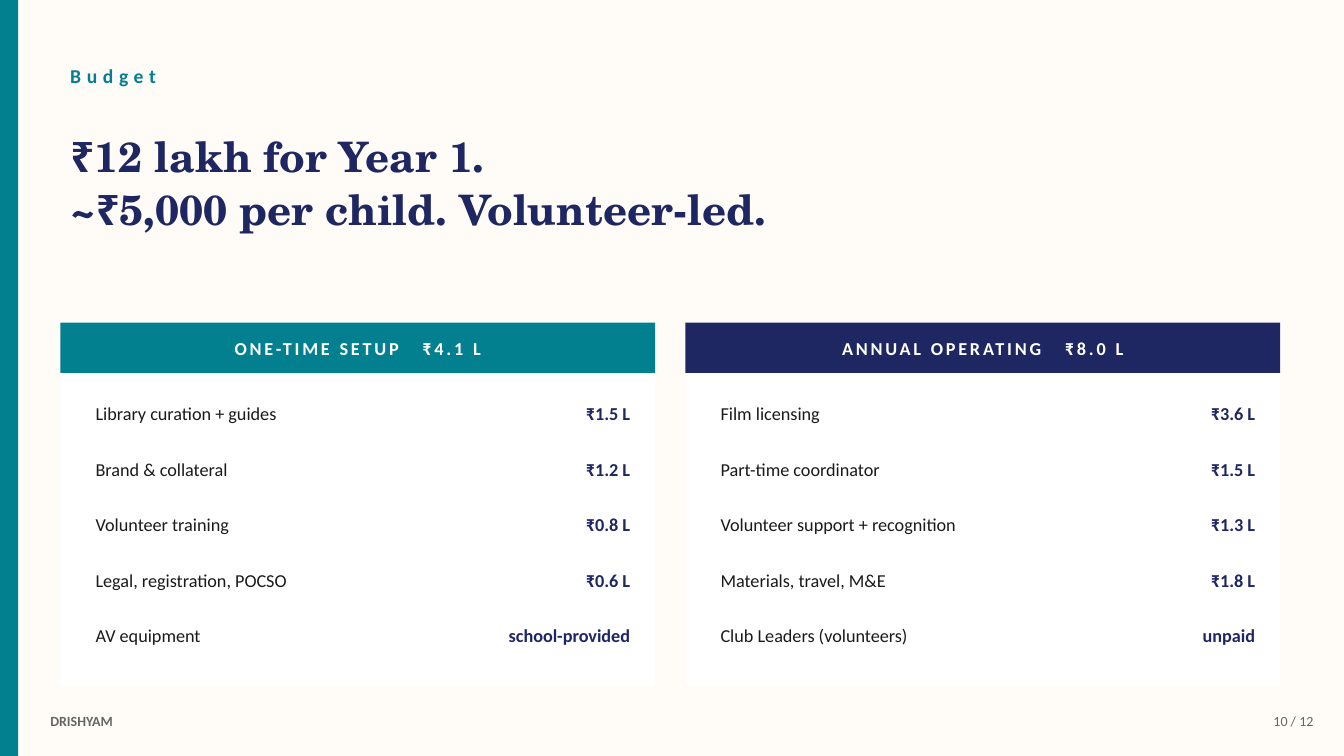
import pptx
import pptx.dml.color
import pptx.enum.shapes
import pptx.enum.text
import pptx.util

Cm = pptx.util.Cm
Pt = pptx.util.Pt
RGBColor = pptx.dml.color.RGBColor
ALIGN = pptx.enum.text.PP_ALIGN

CREAM = RGBColor(0xFF, 0xFC, 0xF7)
TEAL = RGBColor(0x02, 0x80, 0x90)
NAVY = RGBColor(0x1E, 0x27, 0x61)
WHITE = RGBColor(0xFF, 0xFF, 0xFF)
INK = RGBColor(0x1A, 0x1A, 0x1A)
GREY = RGBColor(0x66, 0x66, 0x66)

SLIDE_WIDTH, SLIDE_HEIGHT = 33.87, 19.05
PANEL_TOP, PANEL_WIDTH, PANEL_HEIGHT = 8.13, 14.99, 9.14
PANEL_PITCH = 15.75
HEADER_HEIGHT = 1.27
ROW_TOP, ROW_PITCH, ROW_HEIGHT = 9.78, 1.4, 1.27
LABEL_INDENT, LABEL_WIDTH, AMOUNT_WIDTH = 0.64, 10.16, 3.81
LEFT = 1.52

PANELS = [
    ("ONE-TIME SETUP", "₹4.1 L", TEAL, [
        ("Library curation + guides", "₹1.5 L"),
        ("Brand & collateral", "₹1.2 L"),
        ("Volunteer training", "₹0.8 L"),
        ("Legal, registration, POCSO", "₹0.6 L"),
        ("AV equipment", "school-provided"),
    ]),
    ("ANNUAL OPERATING", "₹8.0 L", NAVY, [
        ("Film licensing", "₹3.6 L"),
        ("Part-time coordinator", "₹1.5 L"),
        ("Volunteer support + recognition", "₹1.3 L"),
        ("Materials, travel, M&E", "₹1.8 L"),
        ("Club Leaders (volunteers)", "unpaid"),
    ]),
]


class BudgetSlide:
    body_font = "Calibri"
    title_font = "TeX Gyre Schola"

    def __init__(self, presentation):
        self.slide = presentation.slides.add_slide(presentation.slide_layouts[5])
        background = self.slide.background.fill
        background.solid()
        background.fore_color.rgb = CREAM

    def set_frame(self, text_frame):
        settings = {
            "word_wrap": True,
            "auto_size": pptx.enum.text.MSO_AUTO_SIZE.NONE,
            "vertical_anchor": pptx.enum.text.MSO_ANCHOR.MIDDLE,
        }
        for name, value in settings.items():
            setattr(text_frame, name, value)

    def add_run(self, paragraph, text, size, color, bold=False, tracking=0, font=None):
        """Append a run; tracking is the letter spacing in points."""
        run = paragraph.add_run()
        run.text = text
        settings = {"name": font or self.body_font, "size": Pt(size), "bold": bold}
        for name, value in settings.items():
            setattr(run.font, name, value)
        run.font.color.rgb = color
        if tracking:
            run._r.get_or_add_rPr().set("spc", str(round(tracking * 100)))

    def rectangle(self, left, top, width, height, color):
        shape = self.slide.shapes.add_shape(
            pptx.enum.shapes.MSO_SHAPE.RECTANGLE,
            Cm(left), Cm(top), Cm(width), Cm(height))
        shape.shadow.inherit = False
        shape.fill.solid()
        shape.fill.fore_color.rgb = color
        shape.line.fill.background()
        return shape

    def text(self, left, top, width, height, text, size, color,
             align=ALIGN.LEFT, **style):
        box = self.slide.shapes.add_textbox(Cm(left), Cm(top), Cm(width), Cm(height))
        self.set_frame(box.text_frame)
        paragraph = box.text_frame.paragraphs[0]
        paragraph.alignment = align
        self.add_run(paragraph, text, size, color, **style)

    def title(self, lines):
        title = self.slide.shapes.title
        place = {"left": LEFT, "top": 2.54, "width": 30.48, "height": 4.06}
        for name, value in place.items():
            setattr(title, name, Cm(value))
        frame = title.text_frame
        self.set_frame(frame)
        for index, line in enumerate(lines):
            paragraph = frame.add_paragraph() if index else frame.paragraphs[0]
            paragraph.alignment = ALIGN.LEFT
            paragraph.line_spacing = 1.05
            self.add_run(paragraph, line, 30, NAVY, bold=True, font=self.title_font)

    def panel(self, left, heading, total, color, rows):
        self.rectangle(left, PANEL_TOP, PANEL_WIDTH, PANEL_HEIGHT, WHITE)
        header = self.rectangle(left, PANEL_TOP, PANEL_WIDTH, HEADER_HEIGHT, color)
        self.set_frame(header.text_frame)
        paragraph = header.text_frame.paragraphs[0]
        paragraph.alignment = ALIGN.CENTER
        for text, tracking in ((heading, 2), (" ", 12), (total, 2)):
            self.add_run(paragraph, text, 13, WHITE, bold=True, tracking=tracking)

        label_left = left + LABEL_INDENT
        for index, (label, amount) in enumerate(rows):
            top = ROW_TOP + index * ROW_PITCH
            self.text(label_left, top, LABEL_WIDTH, ROW_HEIGHT, label, 13, INK)
            self.text(label_left + LABEL_WIDTH, top, AMOUNT_WIDTH, ROW_HEIGHT,
                      amount, 13, NAVY, ALIGN.RIGHT, bold=True)


def main():
    presentation = pptx.Presentation()
    presentation.slide_width = Cm(SLIDE_WIDTH)
    presentation.slide_height = Cm(SLIDE_HEIGHT)

    budget = BudgetSlide(presentation)
    budget.rectangle(0, 0, 0.46, SLIDE_HEIGHT, TEAL)
    budget.text(LEFT, 1.27, 15.24, 1.27, "Budget", 14, TEAL, bold=True, tracking=4)
    budget.title(["₹12 lakh for Year 1.", "~₹5,000 per child. Volunteer-led."])
    for index, panel in enumerate(PANELS):
        budget.panel(LEFT + index * PANEL_PITCH, *panel)
    budget.text(30.81, 17.78, 2.54, 0.76, "10 / 12", 10, GREY, ALIGN.RIGHT)
    budget.text(1.02, 17.78, 5.08, 0.76, "DRISHYAM", 10, GREY, bold=True)

    presentation.save("out.pptx")


if __name__ == "__main__":
    main()
